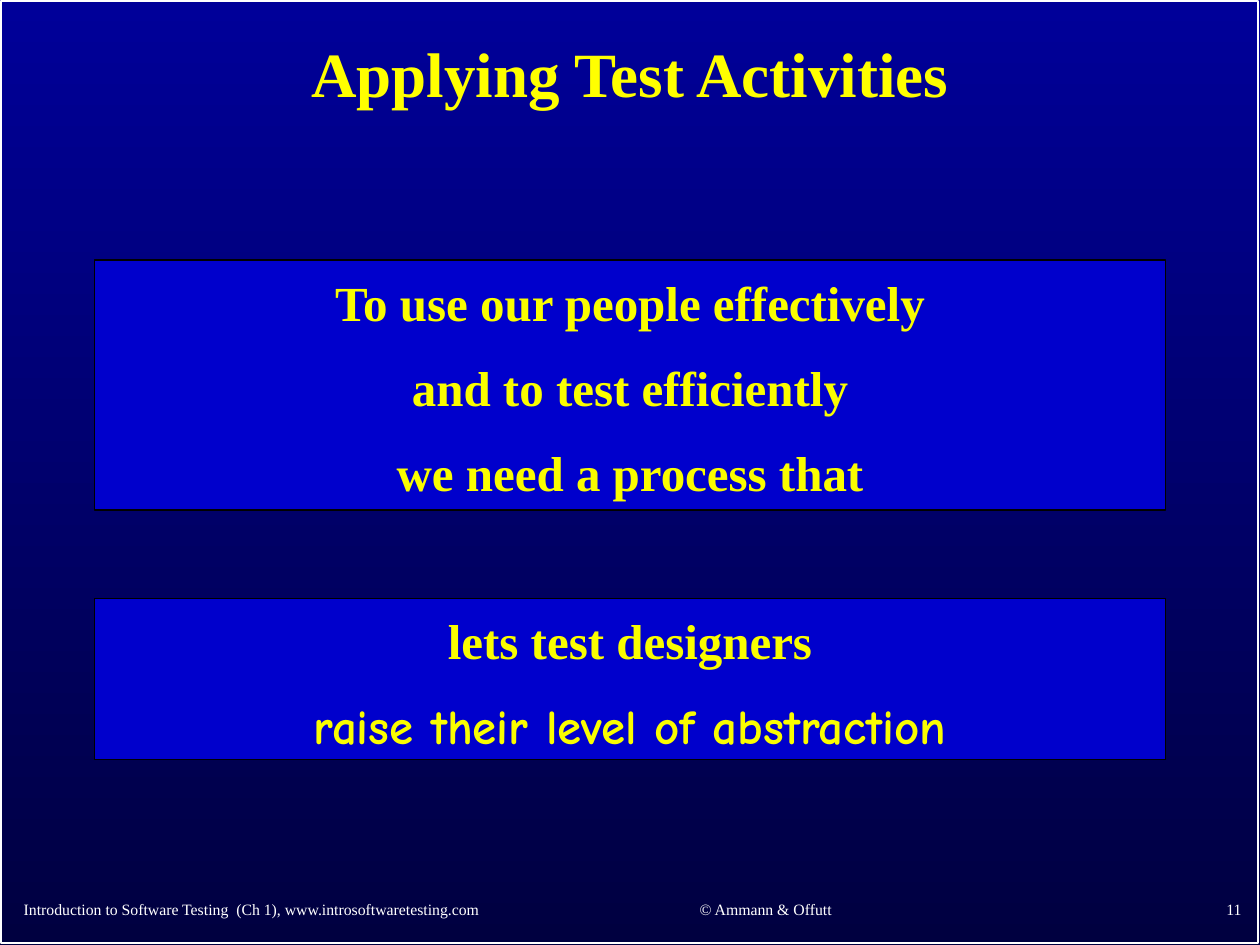
from pptx import Presentation
from pptx.dml.color import RGBColor
from pptx.enum.shapes import MSO_SHAPE
from pptx.enum.text import MSO_ANCHOR, PP_ALIGN
from pptx.util import Pt

NAVY = RGBColor(0x00, 0x00, 0x99)
MIDNIGHT = RGBColor(0x00, 0x00, 0x40)
BLUE = RGBColor(0x00, 0x00, 0xCC)
YELLOW = RGBColor(0xFF, 0xFF, 0x00)
LEMON = RGBColor(0xFA, 0xFD, 0x00)
WHITE = RGBColor(0xFF, 0xFF, 0xFF)
BLACK = RGBColor(0x00, 0x00, 0x00)
SERIF = "Times New Roman"
COMIC = "Comic Neue"


def style_text(para, size, color, bold=False, font=SERIF, align=PP_ALIGN.CENTER):
    """Format a paragraph and its runs."""
    para.alignment = align
    for span in para.runs:
        span.font.name = font
        span.font.size = Pt(size)
        span.font.bold = bold
        span.font.color.rgb = color


def add_label(page, box, text, size, color, bold=False, align=PP_ALIGN.CENTER):
    """Add one vertically centred line of text and return its paragraph."""
    frame = page.shapes.add_textbox(*map(Pt, box)).text_frame
    frame.word_wrap = True
    frame.vertical_anchor = MSO_ANCHOR.MIDDLE
    frame.text = text
    para = frame.paragraphs[0]
    style_text(para, size, color, bold, align=align)
    return para


def add_rectangle(page, box, line_color):
    """Add an unfilled rectangle with a thin outline."""
    rectangle = page.shapes.add_shape(MSO_SHAPE.RECTANGLE, *map(Pt, box))
    rectangle.shadow.inherit = False
    rectangle.fill.background()
    rectangle.line.color.rgb = line_color
    rectangle.line.width = Pt(1)
    return rectangle


def add_backdrop(page, box):
    """Paint the gradient background and the white frame."""
    fill = page.background.fill
    fill.gradient()
    fill.gradient_angle = 270
    for stop, color in zip(fill.gradient_stops, (NAVY, MIDNIGHT)):
        stop.color.rgb = color
    add_rectangle(page, box, WHITE)


def add_title(page, box):
    """Add the slide title."""
    para = add_label(page, box, "Applying Test Activities", 36, YELLOW, bold=True)
    para.line_spacing = 0.9


def add_footer(page, box):
    """Add the source, copyright and page number along the bottom."""
    left, top, width, height = box
    parts = [
        (0, 302, "Introduction to Software Testing  (Ch 1), www.introsoftwaretesting.com", PP_ALIGN.LEFT),
        (317, 228, "© Ammann & Offutt", PP_ALIGN.CENTER),
        (width - 150, 150, "11", PP_ALIGN.RIGHT),
    ]
    for offset, part_width, text, align in parts:
        add_label(page, (left + offset, top, part_width, height), text, 9, WHITE, align=align)


def add_statement(page, box, lines):
    """Add a blue panel with centred lines of (text, font)."""
    panel = add_rectangle(page, box, BLACK)
    panel.fill.solid()
    panel.fill.fore_color.rgb = BLUE
    frame = panel.text_frame
    frame.word_wrap = True
    frame.vertical_anchor = MSO_ANCHOR.TOP
    frame.margin_top = Pt(7)
    frame.text = "\n".join(text for text, font in lines)
    for index, (para, (text, font)) in enumerate(zip(frame.paragraphs, lines)):
        para.space_before = Pt(15 if index else 0)
        style_text(para, 28, LEMON, bold=True, font=font)


def main():
    """Build and save the slide."""
    deck = Presentation()
    deck.slide_width, deck.slide_height = Pt(720), Pt(540)
    page = deck.slides.add_slide(deck.slide_layouts[6])
    add_backdrop(page, (0.75, 0.75, 718, 538))
    add_title(page, (7, 8, 706, 72))
    add_footer(page, (6.5, 505.5, 710, 28))
    add_statement(page, (54, 148.5, 612, 143), [
        ("To use our people effectively", SERIF),
        ("and to test efficiently", SERIF),
        ("we need a process that", SERIF),
    ])
    add_statement(page, (54, 342, 612, 92), [
        ("lets test designers", SERIF),
        ("raise their level of abstraction", COMIC),
    ])
    deck.save("out.pptx")


if __name__ == "__main__":
    main()
